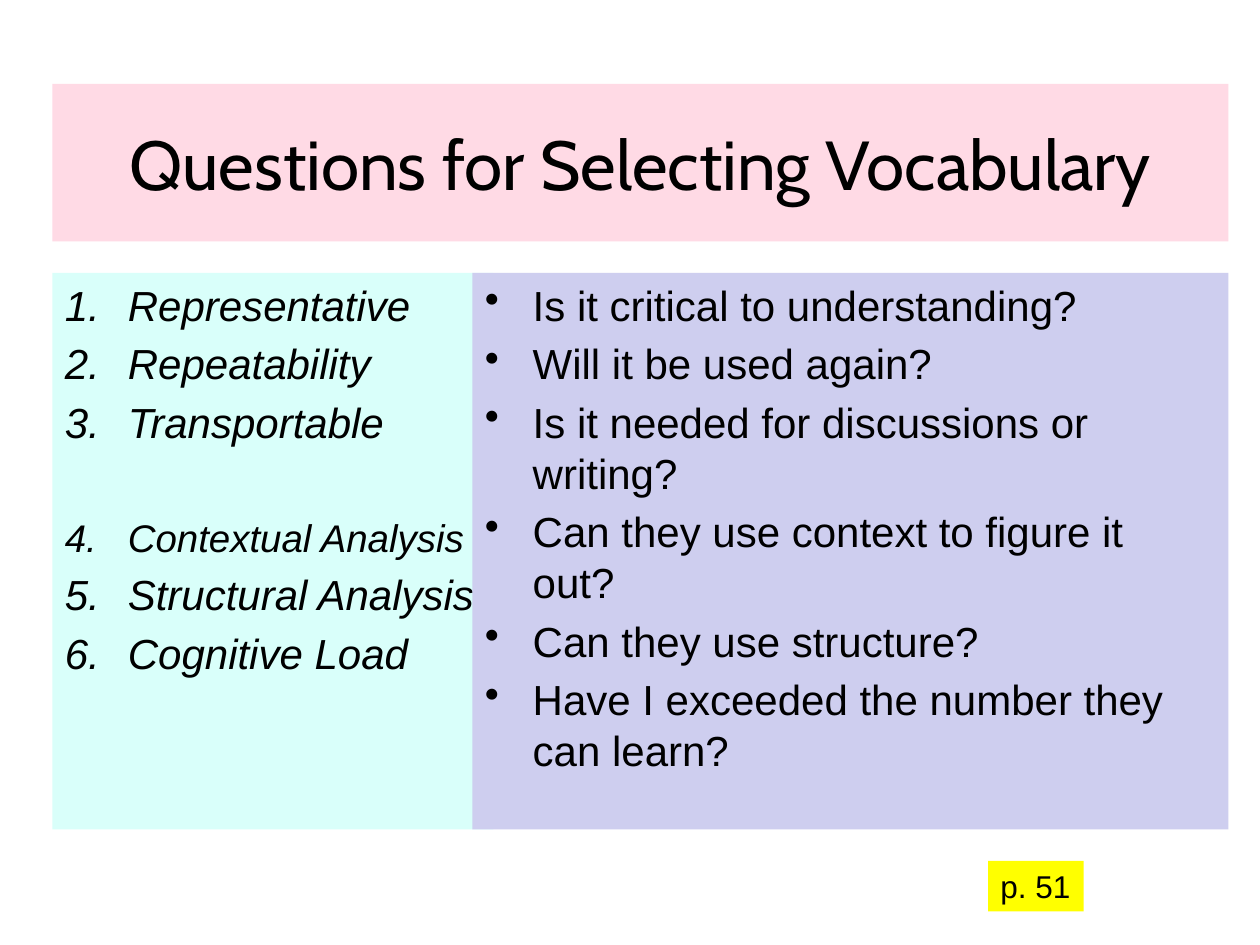
"""Build the slide on questions for selecting vocabulary."""
from dataclasses import dataclass

from lxml import etree
from pptx import Presentation
from pptx.dml.color import RGBColor
from pptx.enum.text import MSO_ANCHOR, MSO_AUTO_SIZE, PP_ALIGN
from pptx.oxml.ns import qn
from pptx.util import Inches, Pt

CENTER, LEFT = PP_ALIGN.CENTER, PP_ALIGN.LEFT
MIDDLE, TOP = MSO_ANCHOR.MIDDLE, MSO_ANCHOR.TOP
NO_FIT, GROW = MSO_AUTO_SIZE.NONE, MSO_AUTO_SIZE.SHAPE_TO_FIT_TEXT
TITLE_ONLY = 5
CELL = Inches(1) // 12
NUMBERED = ("buAutoNum", {"type": "arabicPeriod"})
DOTTED = ("buChar", {"char": "•"})


@dataclass(frozen=True)
class Theme:
    ink: str = "000000"
    pink: str = "FFDAE5"
    mint: str = "D9FFFA"
    lavender: str = "CECEEF"
    yellow: str = "FFFF00"
    heading_font: str = "Cabin"
    body_font: str = "Arial"
    heading: float = 39.6
    body: float = 24
    tight: float = 22
    small: float = 18
    gap: float = 4.8
    line: float = 28.8


@dataclass(frozen=True)
class Area:
    col: float
    row: float
    cols: float
    rows: float


@dataclass(frozen=True)
class Item:
    text: str
    size: float
    before: float


@dataclass(frozen=True)
class Panel:
    area: Area
    fill: str
    items: tuple
    bullet: tuple
    hang: float
    italic: bool


THEME = Theme()


def entry(text: str, size: float = THEME.body, before: float = THEME.gap) -> Item:
    """Describe one list entry."""
    return Item(text, size, before)


CRITERIA = (
    entry("Representative"),
    entry("Repeatability"),
    entry("Transportable"),
    entry("Contextual Analysis", THEME.tight, THEME.line + 2 * THEME.gap),
    entry("Structural Analysis"),
    entry("Cognitive Load"),
)
QUESTIONS = (
    entry("Is it critical to understanding?"),
    entry("Will it be used again?"),
    entry("Is it needed for discussions or writing?"),
    entry("Can they use context to figure it out?"),
    entry("Can they use structure?"),
    entry("Have I exceeded the number they can learn?"),
)
PANELS = (
    Panel(Area(5, 26, 42, 53), THEME.mint, CRITERIA, NUMBERED, 0.5, True),
    Panel(Area(45, 26, 72, 53), THEME.lavender, QUESTIONS, DOTTED, 0.38, False),
)


def place(shape, area: Area, fill: str) -> None:
    """Set a shape on the grid and fill it."""
    shape.left, shape.top = int(area.col * CELL), int(area.row * CELL)
    shape.width, shape.height = int(area.cols * CELL), int(area.rows * CELL)
    shape.fill.solid()
    shape.fill.fore_color.rgb = RGBColor.from_string(fill)


def set_frame(frame, anchor=TOP, wrap: bool = True, fit=NO_FIT) -> None:
    """Set how a text frame holds its text."""
    frame.word_wrap, frame.auto_size = wrap, fit
    frame.vertical_anchor = anchor


def write(paragraph, text: str, *, size: float, font: str = THEME.body_font,
          italic: bool = False, align=LEFT, before: float = 0) -> None:
    """Write formatted text into a paragraph."""
    paragraph.alignment, paragraph.space_before = align, Pt(before)
    run = paragraph.add_run()
    run.text = text
    run.font.size, run.font.name, run.font.italic = Pt(size), font, italic
    run.font.color.rgb = RGBColor.from_string(THEME.ink)


def add_bullet(paragraph, bullet: tuple, hang: float) -> None:
    """Give a paragraph a hanging bullet or number."""
    tag, attributes = bullet
    properties = paragraph._p.get_or_add_pPr()
    properties.set("marL", str(Inches(hang)))
    properties.set("indent", str(-Inches(hang)))
    etree.SubElement(properties, qn(f"a:{tag}"), attributes)


def draw_panel(slide, panel: Panel) -> None:
    """Draw a filled list panel."""
    box = slide.shapes.add_textbox(0, 0, CELL, CELL)
    place(box, panel.area, panel.fill)
    frame = box.text_frame
    set_frame(frame)
    for index, item in enumerate(panel.items):
        paragraph = frame.add_paragraph() if index else frame.paragraphs[0]
        write(paragraph, item.text, size=item.size, italic=panel.italic,
              before=item.before)
        add_bullet(paragraph, panel.bullet, panel.hang)


def main() -> None:
    """Build and save the slide."""
    deck = Presentation()
    deck.slide_width, deck.slide_height = 120 * CELL, 90 * CELL
    slide = deck.slides.add_slide(deck.slide_layouts[TITLE_ONLY])

    title = slide.shapes.title
    place(title, Area(5, 8, 112, 15), THEME.pink)
    set_frame(title.text_frame, anchor=MIDDLE)
    write(title.text_frame.paragraphs[0], "Questions for Selecting Vocabulary",
          size=THEME.heading, font=THEME.heading_font, align=CENTER)

    for panel in PANELS:
        draw_panel(slide, panel)

    page = slide.shapes.add_textbox(0, 0, CELL, CELL)
    place(page, Area(94.1, 82, 9.1, 4.8), THEME.yellow)
    set_frame(page.text_frame, wrap=False, fit=GROW)
    write(page.text_frame.paragraphs[0], "p. 51", size=THEME.small)

    deck.save("out.pptx")


if __name__ == "__main__":
    main()
